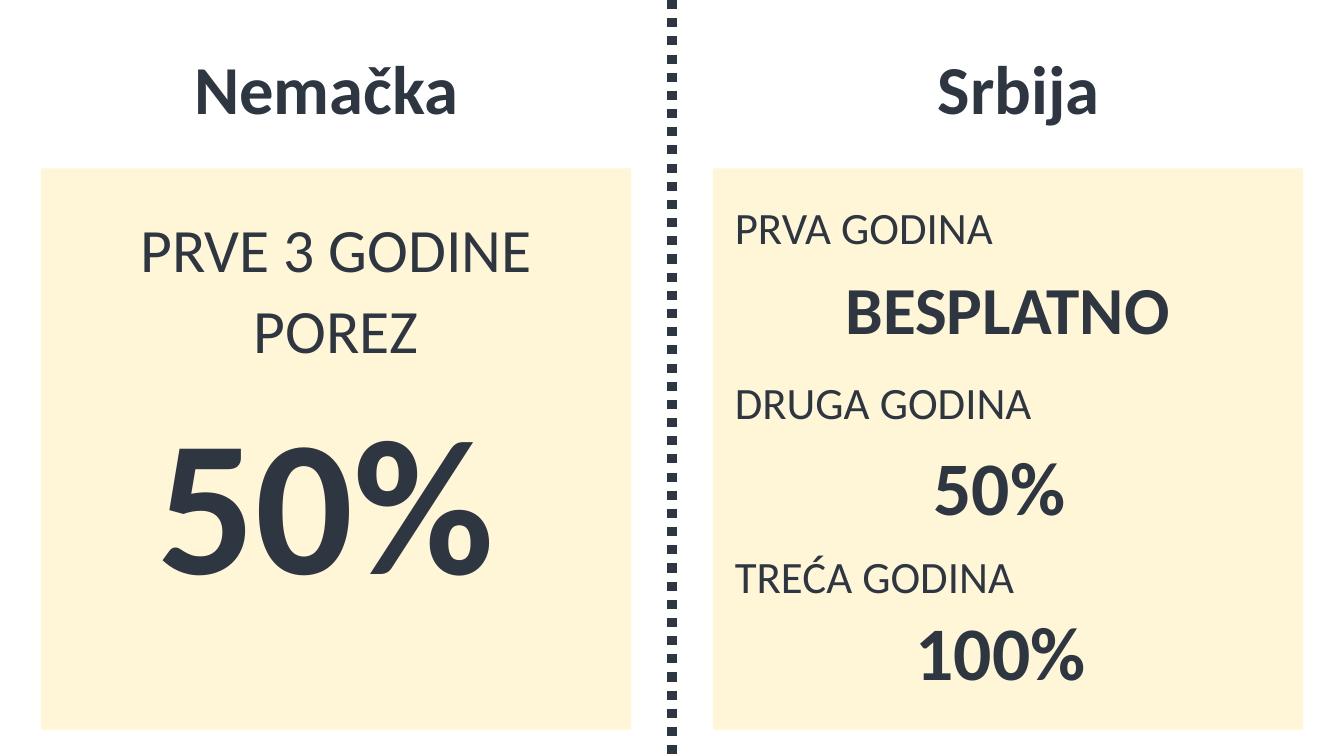
"""Build a slide comparing the first years of tax in Germany and Serbia."""
from lxml import etree
from pptx import Presentation
from pptx.dml.color import RGBColor
from pptx.enum.dml import MSO_LINE
from pptx.enum.shapes import MSO_CONNECTOR, MSO_SHAPE
from pptx.enum.text import MSO_ANCHOR, MSO_AUTO_SIZE, PP_ALIGN
from pptx.oxml.ns import qn
from pptx.util import Inches, Pt

LEFT, CENTER = PP_ALIGN.LEFT, PP_ALIGN.CENTER
TOP, NO_FIT = MSO_ANCHOR.TOP, MSO_AUTO_SIZE.NONE
RECTANGLE, STRAIGHT = MSO_SHAPE.RECTANGLE, MSO_CONNECTOR.STRAIGHT
DOTTED = MSO_LINE.ROUND_DOT

THEME = {
    "font": "Calibri",
    "ink": RGBColor.from_string("2E3641"),
    "panel": RGBColor.from_string("FFD966"),
    "panel_alpha": "26000",
    "divider": Pt(6.5),
}
STYLES = {
    "heading": {"size": Pt(49), "bold": True, "align": CENTER},
    "intro": {"size": Pt(44), "bold": False, "align": CENTER},
    "huge": {"size": Pt(138), "bold": True, "align": CENTER},
    "year": {"size": Pt(32), "bold": False, "align": LEFT},
    "word": {"size": Pt(48), "bold": True, "align": CENTER},
    "rate": {"size": Pt(54), "bold": True, "align": CENTER},
}

deck = Presentation()
deck.slide_width, deck.slide_height = Inches(13.33), Inches(7.5)
page = deck.slides.add_slide(deck.slide_layouts[4])
slots = {slot.placeholder_format.idx: slot for slot in page.placeholders}


def share(left, top, width, height):
    """Turn percentages of the slide into lengths."""
    across, down = deck.slide_width / 100, deck.slide_height / 100
    return [int(left * across), int(top * down), int(width * across), int(height * down)]


def write(box, lines, style):
    """Fill a box with paragraphs in one of the styles."""
    look = STYLES[style]
    frame = box.text_frame
    for name, value in {"word_wrap": True, "auto_size": NO_FIT, "vertical_anchor": TOP}.items():
        setattr(frame, name, value)
    frame.text = "\n".join(lines)
    for para in frame.paragraphs:
        spacing = {"alignment": look["align"], "line_spacing": 0.9,
                   "space_before": Pt(10), "space_after": Pt(0)}
        for name, value in spacing.items():
            setattr(para, name, value)
        properties = para._p.get_or_add_pPr()
        properties.set("marL", "0")
        properties.set("indent", "0")
        etree.SubElement(properties, qn("a:buNone"))
        span = para.runs[0].font
        span.color.rgb = THEME["ink"]
        for name, value in {"name": THEME["font"], "size": look["size"], "bold": look["bold"]}.items():
            setattr(span, name, value)


divider = page.shapes.add_connector(STRAIGHT, deck.slide_width // 2, 0,
                                    deck.slide_width // 2, deck.slide_height)
divider.line.color.rgb = THEME["ink"]
divider.line.width = THEME["divider"]
divider.line.dash_style = DOTTED
etree.SubElement(divider.element.spPr, qn("a:effectLst"))

for half in (0, 50):
    panel = page.shapes.add_shape(RECTANGLE, *share(3.06 + half, 22.27, 43.89, 74.27))
    panel.shadow.inherit = False
    panel.line.fill.background()
    panel.fill.solid()
    panel.fill.fore_color.rgb = THEME["panel"]
    color = panel.element.spPr.find(qn("a:solidFill"))[0]
    etree.SubElement(color, qn("a:alpha")).set("val", THEME["panel_alpha"])

HEADING_SIZE, TEXT_SIZE = (21.38, 9.47), (38.33, 12.4)
slot_texts = [
    (0, ["Nemačka"], "heading", (13.58, 6.67, *HEADING_SIZE)),
    (1, ["Srbija"], "heading", (65.12, 6.67, *HEADING_SIZE)),
    (2, ["PRVE 3 GODINE", "POREZ"], "intro", (5.85, 28.4, *TEXT_SIZE)),
]
for index, lines, style, place in slot_texts:
    slot = slots.pop(index)
    slot.left, slot.top, slot.width, slot.height = share(*place)
    write(slot, lines, style)
    slot.element.getparent().append(slot.element)
for spare in slots.values():
    spare.element.getparent().remove(spare.element)

box_texts = [("50%", "huge", 5.1, 53.2)]
years = [
    ("PRVA GODINA", "BESPLATNO", "word", 55.81, 35.87),
    ("DRUGA GODINA", "50%", "rate", 55.21, 58.93),
    ("TREĆA GODINA", "100%", "rate", 55.29, 80.67),
]
for row, (year, amount, style, left, top) in enumerate(years):
    box_texts.append((year, "year", 53.94, 26.53 + row * 23.13))
    box_texts.append((amount, style, left, top))
for text, style, left, top in box_texts:
    write(page.shapes.add_textbox(*share(left, top, *TEXT_SIZE)), [text], style)

deck.save("out.pptx")
